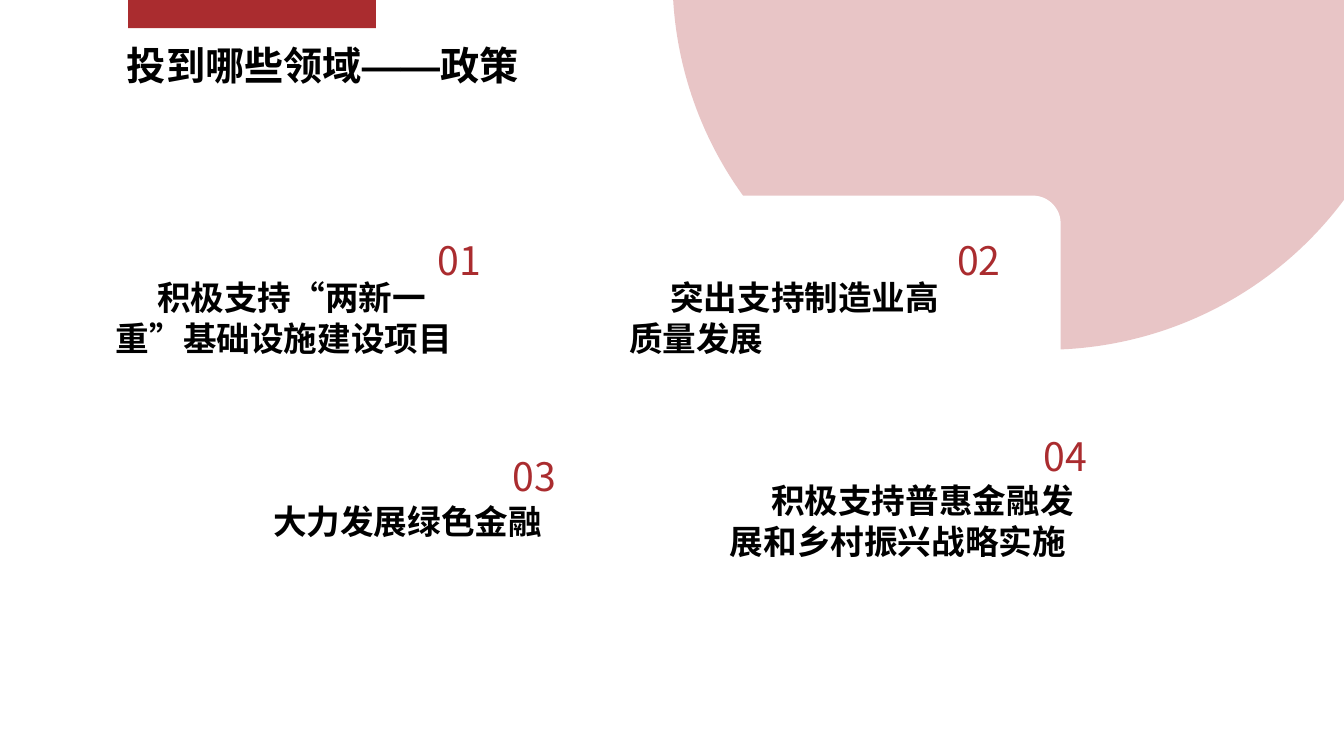
from pptx import Presentation
from pptx import util as u
from pptx.dml.color import RGBColor
from pptx.enum import shapes, text
from pptx.oxml.ns import qn
from lxml import etree

THEME = {
    "red": RGBColor(0xAA, 0x2C, 0x2F), "white": RGBColor(255, 255, 255),
    "black": RGBColor(0, 0, 0), "cjk": "Noto Sans CJK SC", "latin": "Arial",
    "large": 28, "body": 24, "large_line": 36, "body_line": 29,
}

prs = Presentation()
prs.slide_width, prs.slide_height = u.Inches(13.33), u.Inches(7.5)
s = prs.slides.add_slide(prs.slide_layouts[6])


def add_block(kind, x, y, w, h, color):
    sp = s.shapes.add_shape(kind, *map(u.Inches, (x, y, w, h)))
    sp.shadow.inherit = False
    sp.fill.solid()
    sp.fill.fore_color.rgb = color
    sp.line.fill.background()
    return sp


def add_text(x, y, w, h, runs, size, line, color, bold=False, align=None, indent=0):
    tf = s.shapes.add_textbox(*map(u.Inches, (x, y, w, h))).text_frame
    tf.word_wrap = True
    p = tf.paragraphs[0]
    p.alignment = align
    p.line_spacing = u.Pt(line)
    if indent:
        p._p.get_or_add_pPr().set("indent", str(u.Inches(indent)))
    for words, font in runs:
        r = p.add_run()
        r.text = words
        r.font.size, r.font.bold, r.font.name = u.Pt(size), bold, font
        r.font.color.rgb = color
        # East Asian typeface
        rPr = r._r.get_or_add_rPr()
        rPr.set("lang", "zh-CN")
        latin = rPr.find(qn("a:latin"))
        ea = etree.Element(qn("a:ea"), typeface=font)
        latin.addnext(ea)


# Translucent circle in the corner
circle = add_block(shapes.MSO_SHAPE.OVAL, 6.67, -3.91, 7.39, 7.38, THEME["red"])
tint = circle.fill._xPr.find(qn("a:solidFill"))[0]
etree.SubElement(tint, qn("a:alpha"), val="27000")

# White cards with their numbers
cards = [(0.78, 1.94), (5.93, 1.94), (1.52, 4.09), (6.79, 3.89)]
for n, (x, y) in enumerate(cards, 1):
    card = add_block(shapes.MSO_SHAPE.ROUNDED_RECTANGLE, x, y, 4.59, 2.31, THEME["white"])
    card.adjustments[0] = 0.12
    add_text(x + 3.3, y + 0.32, 0.96, 0.57, [(f"{n:02d}", THEME["cjk"])],
             THEME["large"], THEME["large_line"], THEME["red"],
             align=text.PP_ALIGN.CENTER)

# Policy areas
areas = [
    (1.05, 2.7, 3.68, 0.9, 0.41, "积极支持“两新一重”基础设施建设项目"),
    (6.14, 2.7, 3.31, 0.9, 0.41, "突出支持制造业高质量发展"),
    (2.14, 4.92, 3.76, 0.5, 0.47, "大力发展绿色金融"),
    (7.14, 4.71, 3.92, 1.3, 0.41, "积极支持普惠金融发展和乡村振兴战略实施"),
]
for x, y, w, h, indent, words in areas:
    add_text(x, y, w, h, [(words, THEME["cjk"])], THEME["body"],
             THEME["body_line"], THEME["black"], bold=True, indent=indent)

# Title under a red tab
add_block(shapes.MSO_SHAPE.RECTANGLE, 1.27, 0, 2.46, 0.28, THEME["red"])
title = [("投到哪些领域", THEME["cjk"]), ("——", THEME["latin"]), ("政策", THEME["cjk"])]
add_text(1.16, 0.33, 6.92, 0.57, title, THEME["large"], THEME["large_line"],
         THEME["black"], bold=True)

prs.save("out.pptx")
